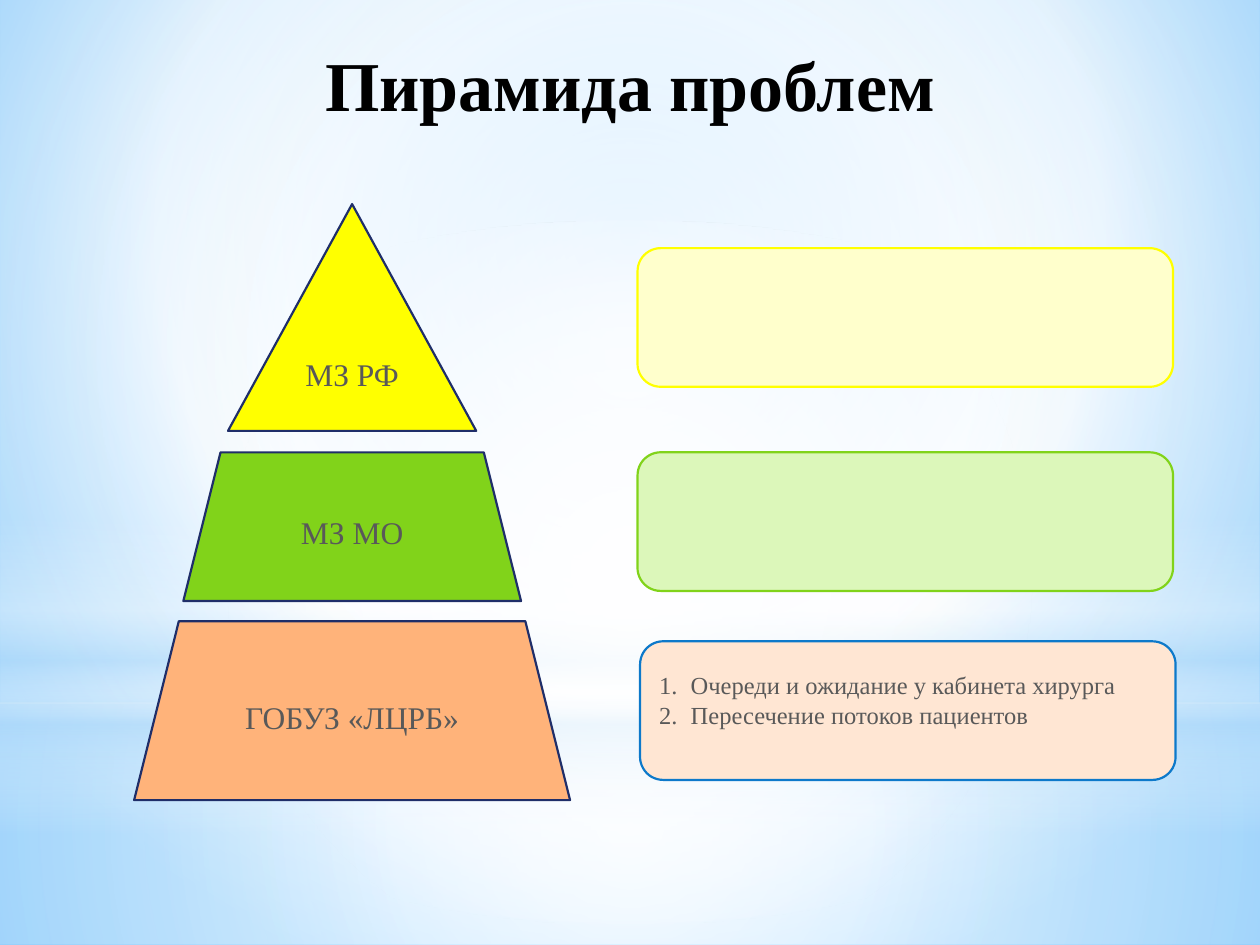
from lxml import etree
from pptx import Presentation
from pptx.dml.color import RGBColor
from pptx.enum.shapes import MSO_SHAPE
from pptx.enum.text import MSO_ANCHOR, PP_ALIGN
from pptx.oxml.ns import qn
from pptx.util import Inches, Pt

RECTANGLE, OVAL = MSO_SHAPE.RECTANGLE, MSO_SHAPE.OVAL
TRIANGLE, TRAPEZOID = MSO_SHAPE.ISOSCELES_TRIANGLE, MSO_SHAPE.TRAPEZOID
ROUNDED = MSO_SHAPE.FLOWCHART_ALTERNATE_PROCESS
MIDDLE, BOTTOM = MSO_ANCHOR.MIDDLE, MSO_ANCHOR.BOTTOM
CENTER, LEFT = PP_ALIGN.CENTER, PP_ALIGN.LEFT

FONT = "Times New Roman"
COLORS = {
    "white": "FFFFFF", "sky": "9ED5FF", "azure": "5BB9FF", "haze": "B4DCFA",
    "title": "000000", "text": "595959", "navy": "1F2E69", "blue": "0D79CA",
    "yellow": "FFFF00", "pale yellow": "FFFFCC",
    "green": "81D31A", "pale green": "DCF7BA",
    "orange": "FFB37A", "pale orange": "FFE6D3",
}


def set_gradient(fill, element, stops, center=None):
    """Stops are (position %, colour, opacity %); without a center it runs downwards."""
    fill.gradient()
    grad = element.find(".//" + qn("a:gradFill"))
    for child in list(grad):
        grad.remove(child)
    stop_list = etree.SubElement(grad, qn("a:gsLst"))
    for position, color, opacity in stops:
        stop = etree.SubElement(stop_list, qn("a:gs"), pos=str(position * 1000))
        rgb = etree.SubElement(stop, qn("a:srgbClr"), val=COLORS[color])
        etree.SubElement(rgb, qn("a:alpha"), val=str(opacity * 1000))
    if center:
        circle = etree.SubElement(grad, qn("a:path"), {"path": "circle"})
        sides = {side: str(share * 1000) for side, share in zip("ltrb", center)}
        etree.SubElement(circle, qn("a:fillToRect"), sides)
    else:
        etree.SubElement(grad, qn("a:lin"), ang="5400000", scaled="0")


def add_block(kind, box, fill, line, lines=(), size=18, align=CENTER):
    block = slide.shapes.add_shape(kind, *map(Inches, box))
    block.shadow.inherit = False
    block.fill.solid()
    block.fill.fore_color.rgb = RGBColor.from_string(COLORS[fill])
    block.line.color.rgb = RGBColor.from_string(COLORS[line])
    block.line.width = Pt(1.25)
    frame = block.text_frame
    frame.vertical_anchor = MIDDLE
    for number, wording in enumerate(lines):
        paragraph = frame.add_paragraph() if number else frame.paragraphs[0]
        paragraph.alignment = align
        run = paragraph.add_run()
        run.text = wording
        run.font.name, run.font.size = FONT, Pt(size)
        run.font.color.rgb = RGBColor.from_string(COLORS["text"])
    return block


prs = Presentation()
prs.slide_width, prs.slide_height = Inches(10), Inches(7.5)
slide = prs.slides.add_slide(prs.slide_layouts[5])

# Background with soft light layers
set_gradient(slide.background.fill, slide.element,
             [(0, "sky", 100), (60, "white", 100), (100, "azure", 100)],
             (20, 10, 20, 60))
middle = (50, 50, 50, 50)
light_layers = [
    (RECTANGLE, (0, 5.58, 10, 1.92), middle,
     [(0, "white", 91), (37, "white", 76), (100, "haze", 79)]),
    (RECTANGLE, (0, 0, 10, 5.58), middle,
     [(0, "white", 89), (48, "white", 62), (100, "haze", 79)]),
    (RECTANGLE, (0, 4.12, 10, 2.5), None,
     [(0, "white", 0), (29, "white", 30), (45, "haze", 40),
      (55, "white", 26), (65, "haze", 60), (100, "white", 0)]),
    (OVAL, (0, 1.75, 10, 5.58), middle, [(0, "white", 100), (56, "white", 0)]),
]
for kind, box, center, stops in light_layers:
    layer = slide.shapes.add_shape(kind, *map(Inches, box))
    layer.shadow.inherit = False
    layer.line.fill.background()
    set_gradient(layer.fill, layer.element, stops, center)

# Title, brought in front of the light layers
title = slide.shapes.title
slide.shapes.element.append(title.element)
title.left, title.top, title.width, title.height = map(Inches, (0.5, 0.29, 9, 0.71))
title.text_frame.vertical_anchor = BOTTOM
title.text_frame.margin_bottom = 0
heading = title.text_frame.paragraphs[0]
heading.alignment = CENTER
run = heading.add_run()
run.text = "Пирамида проблем"
run.font.name, run.font.size, run.font.bold = FONT, Pt(40), True
run.font.color.rgb = RGBColor.from_string(COLORS["title"])

# Pyramid, every level centred on one axis
AXIS = 2.795
levels = [
    (TRAPEZOID, 4.93, 3.46, 1.42, "orange", "ГОБУЗ «ЛЦРБ»"),
    (TRAPEZOID, 3.59, 2.68, 1.18, "green", "МЗ МО"),
    (TRIANGLE, 1.62, 1.97, 1.8, "yellow", "МЗ РФ"),
]
for kind, top, width, height, color, label in levels:
    add_block(kind, (AXIS - width / 2, top, width, height), color, "navy", [label])

# Problem boxes beside the levels
problems = add_block(
    ROUNDED, (5.08, 5.09, 4.25, 1.1), "pale orange", "blue",
    ["Очереди и ожидание у кабинета хирурга", "Пересечение потоков пациентов"],
    14, LEFT)
problems.text_frame.margin_bottom = Inches(0.22)
for paragraph in problems.text_frame.paragraphs:
    properties = paragraph._p.get_or_add_pPr()
    properties.set("marL", str(Inches(0.25)))
    properties.set("indent", str(Inches(-0.25)))
    etree.SubElement(properties, qn("a:buFont"), typeface=FONT)
    etree.SubElement(properties, qn("a:buAutoNum"), type="arabicPeriod")

for top, color in [(3.59, "green"), (1.97, "yellow")]:
    add_block(ROUNDED, (5.06, top, 4.25, 1.1), "pale " + color, color)

prs.save("out.pptx")
